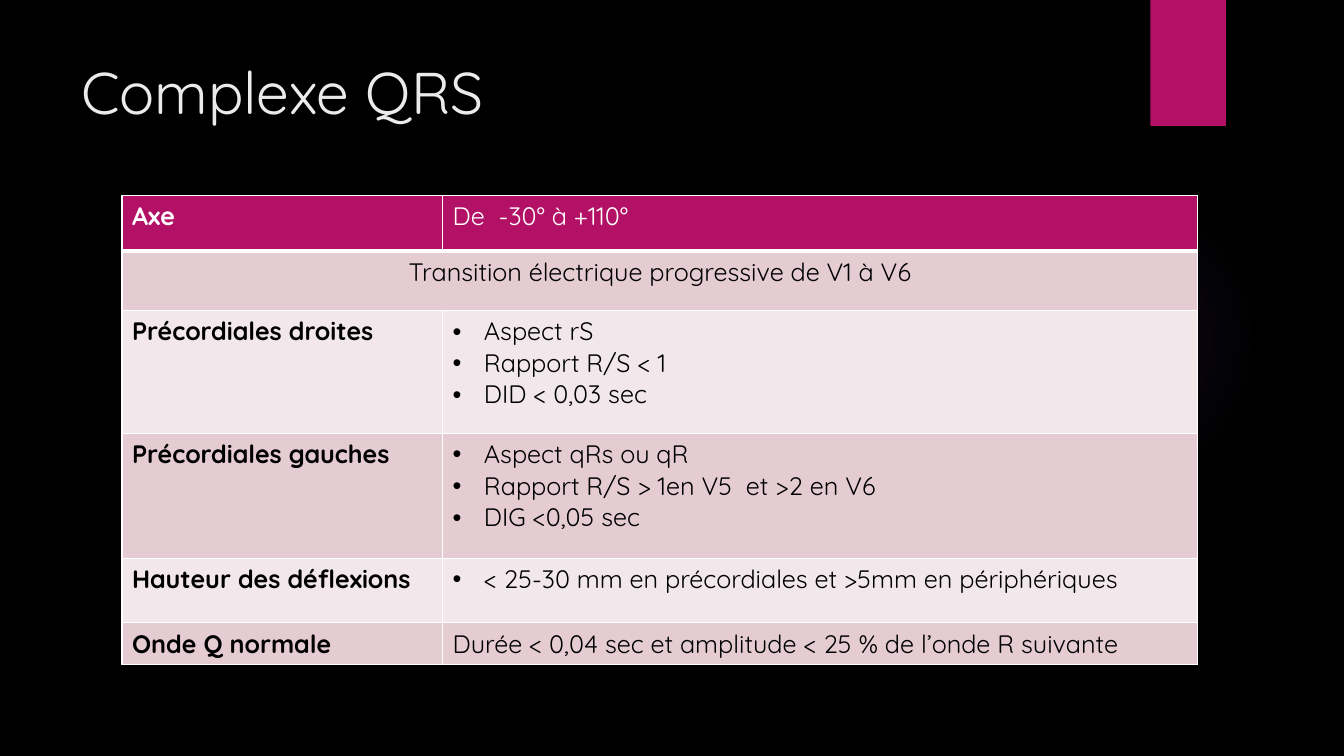
from lxml import etree
from pptx import Presentation
from pptx import util as u
from pptx.dml.color import RGBColor
from pptx.enum import shapes, text
from pptx.oxml import parse_xml
from pptx.oxml.ns import nsdecls, qn

COLORS = {"back": "000000", "accent": "B31166", "glow": "9B6BF2", "title": "EBEBEB",
          "line": "FFFFFF", "head_text": "FFFFFF", "body_text": "000000",
          "dark": "E5CCD3", "light": "F2E7EA"}
FONT = "Quicksand"
COLS = [3.18, 7.49]
ROWS = [
    (0.55, "Axe", "De  -30° à +110°"),
    (0.59, "Transition électrique progressive de V1 à V6", None),
    (1.22, "Précordiales droites", ["Aspect rS", "Rapport R/S < 1", "DID < 0,03 sec"]),
    (1.24, "Précordiales gauches",
     ["Aspect qRs ou qR", "Rapport R/S > 1en V5  et >2 en V6", "DIG <0,05 sec"]),
    (0.64, "Hauteur des déflexions",
     ["< 25-30 mm en précordiales et >5mm en périphériques"]),
    (0.41, "Onde Q normale", "Durée < 0,04 sec et amplitude < 25 % de l’onde R suivante"),
]


def rgb(name):
    return RGBColor.from_string(COLORS[name])


def format_font(font, color, **values):
    font.color.rgb = rgb(color)
    for key, value in {"name": FONT, **values}.items():
        setattr(font, key, value)


def add_shape(s, kind, box):
    sp = s.shapes.add_shape(kind, *map(u.Inches, box))
    sp.shadow.inherit = False
    sp.line.fill.background()
    return sp


def add_glow(s, box):
    sp = add_shape(s, shapes.MSO_SHAPE.OVAL, box)
    sp.fill.background()
    stops = "".join(
        f'<a:gs pos="{pos * 1000}"><a:srgbClr val="{COLORS["glow"]}">'
        f'<a:alpha val="{alpha * 1000}"/></a:srgbClr></a:gs>'
        for pos, alpha in [(0, 7), (36, 6), (69, 0)])
    grad = parse_xml(
        f'<a:gradFill {nsdecls("a")}><a:gsLst>{stops}</a:gsLst><a:path path="circle">'
        '<a:fillToRect l="50000" t="50000" r="50000" b="50000"/></a:path></a:gradFill>')
    spPr = sp._element.spPr
    spPr.replace(spPr.find(qn("a:noFill")), grad)


def add_tab(s, box):
    sp = add_shape(s, shapes.MSO_SHAPE.RECTANGLE, box)
    sp.fill.solid()
    sp.fill.fore_color.rgb = rgb("accent")


def add_title(s, box, title):
    tf = s.shapes.add_textbox(*map(u.Inches, box)).text_frame
    tf.word_wrap = True
    tf.vertical_anchor = text.MSO_ANCHOR.TOP
    r = tf.paragraphs[0].add_run()
    r.text = title
    format_font(r.font, "title", size=u.Pt(42))


def add_bullet(p):
    pPr = p._p.get_or_add_pPr()
    pPr.set("marL", str(u.Inches(0.31)))
    pPr.set("indent", str(-u.Inches(0.31)))
    etree.SubElement(pPr, qn("a:buFont")).set("typeface", "Arial")
    etree.SubElement(pPr, qn("a:buChar")).set("char", "•")


def style_cell(cell, fill, top, bottom):
    tcPr = cell._tc.get_or_add_tcPr()
    for side, width in {"L": 1, "R": 1, "T": top, "B": bottom}.items():
        tcPr.append(parse_xml(
            f'<a:ln{side} {nsdecls("a")} w="{u.Pt(width)}"><a:solidFill>'
            f'<a:srgbClr val="{COLORS["line"]}"/></a:solidFill></a:ln{side}>'))
    cell.fill.solid()
    cell.fill.fore_color.rgb = rgb(fill)


def fill_cell(cell, content, color, bold):
    bulleted = isinstance(content, list)
    tf = cell.text_frame
    for i, line in enumerate(content if bulleted else [content]):
        p = tf.paragraphs[0] if i == 0 else tf.add_paragraph()
        if bulleted:
            add_bullet(p)
        r = p.add_run()
        r.text = line
        format_font(r.font, color, size=u.Pt(18), bold=bold)


def add_criteria_table(s, box):
    table = s.shapes.add_table(len(ROWS), len(COLS), *map(u.Inches, box)).table
    for col, width in zip(table.columns, COLS):
        col.width = u.Inches(width)
    for i, (height, label, value) in enumerate(ROWS):
        table.rows[i].height = u.Inches(height)
        left, right = table.cell(i, 0), table.cell(i, 1)
        fill = "accent" if i == 0 else "dark" if i % 2 else "light"
        color = "head_text" if i == 0 else "body_text"
        for cell in (left, right):
            style_cell(cell, fill, 3 if i == 1 else 1, 3 if i == 0 else 1)
        fill_cell(left, label, color, value is not None)
        if value is None:
            left.merge(right)
            left.text_frame.paragraphs[0].alignment = text.PP_ALIGN.CENTER
        else:
            fill_cell(right, value, color, False)


def main():
    prs = Presentation()
    prs.slide_width, prs.slide_height = u.Inches(13.33), u.Inches(7.5)
    s = prs.slides.add_slide(prs.slide_layouts[6])
    s.background.fill.solid()
    s.background.fill.fore_color.rgb = rgb("back")
    add_glow(s, (9.41, 1.83, 3.08, 3.08))
    add_tab(s, (11.41, 0, 0.75, 1.25))
    add_title(s, (0.71, 0.5, 10.29, 1.53), "Complexe QRS")
    add_criteria_table(s, (1.21, 1.94, sum(COLS), sum(row[0] for row in ROWS)))
    prs.save("out.pptx")


if __name__ == "__main__":
    main()
